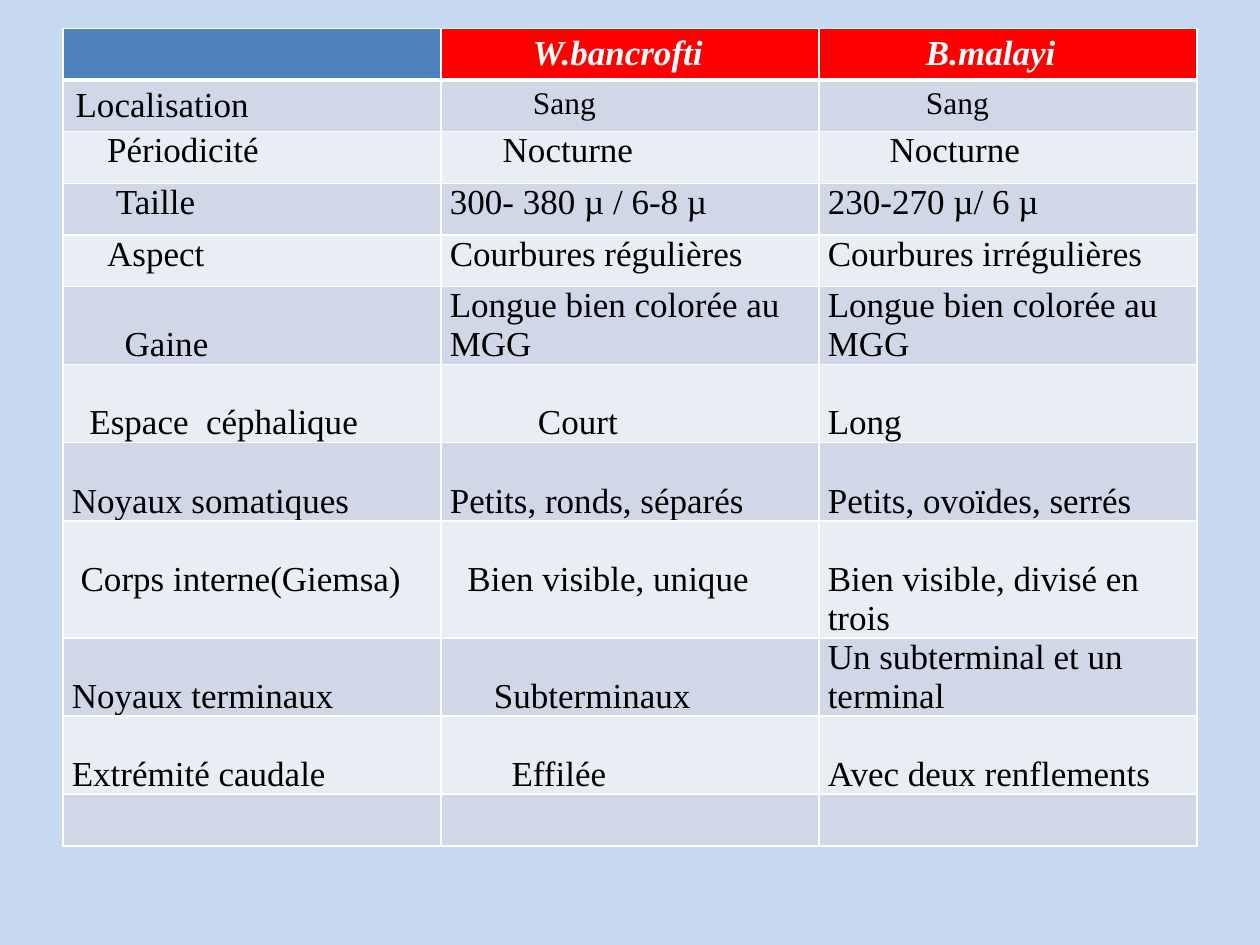
from lxml import etree
from pptx import Presentation
from pptx.dml.color import RGBColor
from pptx.oxml.ns import qn
from pptx.util import Inches, Pt

BLANK_LAYOUT = 6
FONT = "Times New Roman"
BACKGROUND, WHITE, BLACK = "C6D9F1", "FFFFFF", "000000"
HEADER_FILLS = ["4F81BD", "FF0000", "FF0000"]
BAND_FILLS = ["D0D8E8", "E9EDF4"]

LINE = 0.31  # height of one text line
ROW = 0.41   # height of a single-line row
SPACE = 0.07  # one step of indent

# Each cell: text, indent steps, lines left free above the text.
HEADER = [("", 0, 0), ("W.bancrofti", 9, 0), ("B.malayi", 10.7, 0)]
ROWS = [
    [("Localisation", 0, 0), ("Sang", 9, 0), ("Sang", 10.7, 0)],
    [("Périodicité", 4, 0), ("Nocturne", 6, 0), ("Nocturne", 7, 0)],
    [("Taille", 5, 0), ("300- 380 µ / 6-8 µ", 0, 0), ("230-270 µ/ 6 µ", 0, 0)],
    [("Aspect", 4, 0), ("Courbures régulières", 0, 0),
     ("Courbures irrégulières", 0, 0)],
    [("Gaine", 6, 1), ("Longue bien colorée au MGG", 0, 0),
     ("Longue bien colorée au MGG", 0, 0)],
    [("Espace  céphalique", 2, 1), ("Court", 10, 1), ("Long", 0, 1)],
    [("Noyaux somatiques", 0, 1), ("Petits, ronds, séparés", 0, 1),
     ("Petits, ovoïdes, serrés", 0, 1)],
    [("Corps interne(Giemsa)", 1, 1), ("Bien visible, unique", 2, 1),
     ("Bien visible, divisé en trois", 0, 1)],
    [("Noyaux terminaux", 0, 1), ("Subterminaux", 5, 1),
     ("Un subterminal et un terminal", 0, 0)],
    [("Extrémité caudale", 0, 1), ("Effilée", 7, 1),
     ("Avec deux renflements", 0, 1)],
    [("", 0, 0)] * 3,
]
ROW_HEIGHTS = [ROW] * 5 + [2 * LINE] * 3 + [3 * LINE] + [2 * LINE] * 2 + [ROW]


def color(value):
    return RGBColor.from_string(value)


def set_fill(target, value):
    target.fill.solid()
    target.fill.fore_color.rgb = color(value)


def set_borders(cell, widths):
    """Draw white borders; widths maps a border tag to points."""
    properties = cell._tc.get_or_add_tcPr()
    for tag, width in widths.items():
        line = etree.SubElement(properties, qn(f"a:{tag}"), w=str(Pt(width)))
        fill = etree.SubElement(line, qn("a:solidFill"))
        etree.SubElement(fill, qn("a:srgbClr"), val=WHITE)


def write_cell(cell, content, margins, font_values, font_color):
    text, indent, lines_above = content
    side, vertical = margins
    cell.margin_left = Inches(side + indent * SPACE)
    cell.margin_right = Inches(side)
    cell.margin_top = Inches(vertical + lines_above * LINE)
    cell.margin_bottom = Inches(vertical)
    if not text:
        return
    run = cell.text_frame.paragraphs[0].add_run()
    run.text = text
    for name, value in font_values.items():
        setattr(run.font, name, value)
    run.font.color.rgb = color(font_color)


def add_comparison_table(slide, left, top, width):
    rows = [HEADER] + ROWS
    table = slide.shapes.add_table(
        len(rows), len(HEADER), left, top, width,
        Inches(sum(ROW_HEIGHTS))).table
    for column in table.columns:
        column.width = width // len(HEADER)
    for row_index, contents in enumerate(rows):
        table.rows[row_index].height = Inches(ROW_HEIGHTS[row_index])
        is_header = row_index == 0
        roomy = row_index < 2 or row_index == len(rows) - 1
        margins = (0.1, 0.05) if roomy else (0.07, 0)
        for column_index, content in enumerate(contents):
            cell = table.cell(row_index, column_index)
            set_borders(cell, {"lnL": 1, "lnR": 1,
                               "lnT": 3 if row_index == 1 else 1,
                               "lnB": 3 if is_header else 1})
            set_fill(cell, HEADER_FILLS[column_index] if is_header
                     else BAND_FILLS[(row_index - 1) % 2])
            font_values = {"name": FONT, "bold": is_header, "italic": is_header,
                           "size": Pt(18 if content[0] == "Sang" else 20)}
            write_cell(cell, content, margins, font_values,
                       WHITE if is_header else BLACK)


def main():
    presentation = Presentation()
    presentation.slide_width, presentation.slide_height = Inches(10), Inches(7.5)
    slide = presentation.slides.add_slide(presentation.slide_layouts[BLANK_LAYOUT])
    set_fill(slide.background, BACKGROUND)
    slide_width, slide_height = presentation.slide_width, presentation.slide_height
    add_comparison_table(slide, int(slide_width * 0.05),
                         int(slide_height * 0.03), int(slide_width * 0.9))
    presentation.save("out.pptx")


if __name__ == "__main__":
    main()
